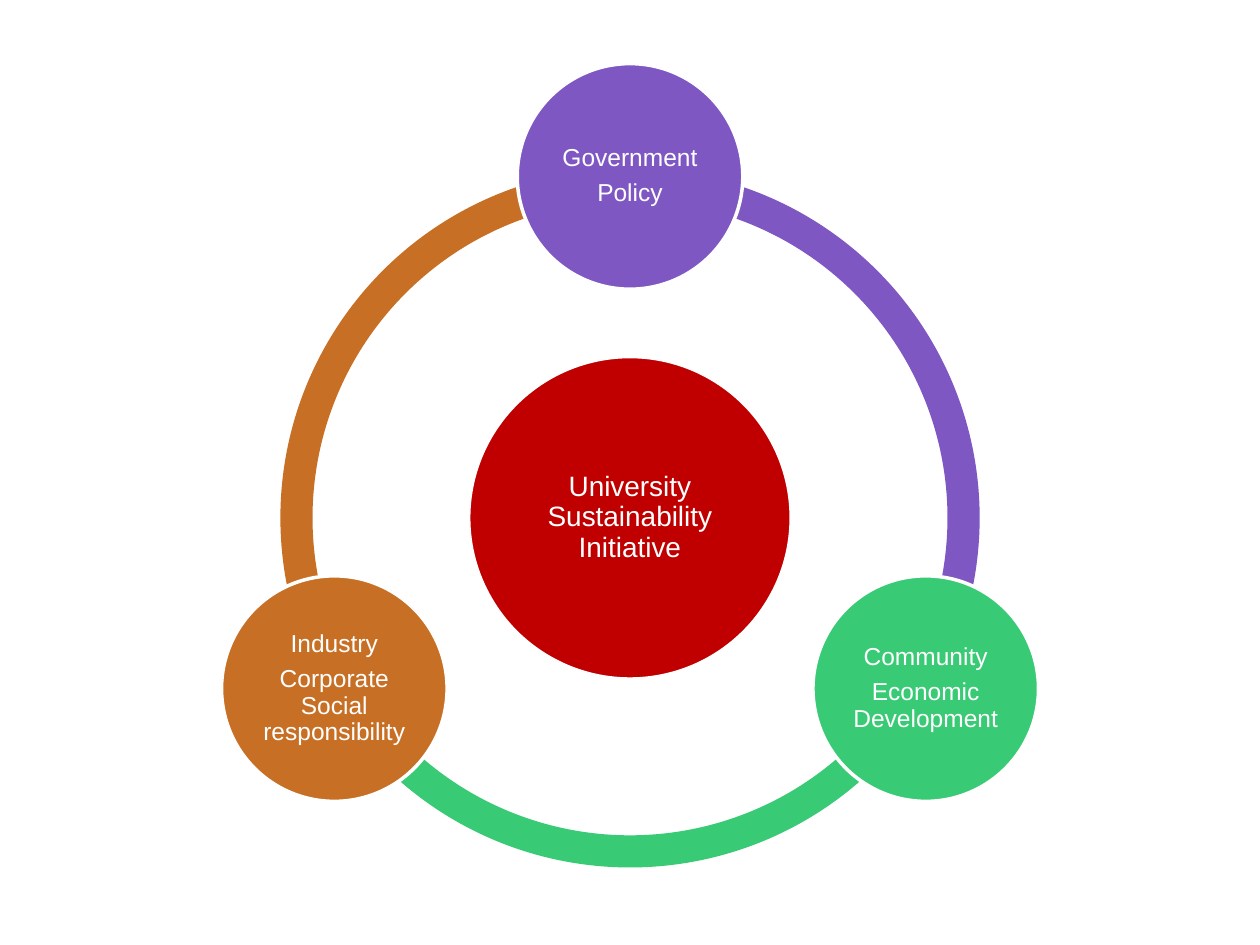
import math
from dataclasses import dataclass

import pptx
import pptx.dml.color
import pptx.enum.shapes
import pptx.enum.text
import pptx.util

Inches = pptx.util.Inches
Pt = pptx.util.Pt
RGBColor = pptx.dml.color.RGBColor
SHAPE = pptx.enum.shapes.MSO_SHAPE


@dataclass(frozen=True)
class Theme:
    white: str = "FFFFFF"
    hub: str = "C00000"
    government: str = "7E57C2"
    community: str = "39CA75"
    industry: str = "C77025"
    font: str = "Arial"
    hub_size: int = 16
    partner_size: int = 14
    outline: int = 2


THEME = Theme()
CENTER_X, CENTER_Y = 5, 4.11
RING_DIAMETER, RING_THICKNESS = 5.55, 0.046
HUB_DIAMETER, PARTNER_DIAMETER = 2.56, 1.79
ORBIT_RADIUS = 2.71
ANGLE_UNIT = 0.6  # adjustment value per degree

# Clockwise from the top: colour and paragraphs
PARTNERS = [
    (THEME.government, ["Government", "Policy"]),
    (THEME.community, ["Community", "Economic Development"]),
    (THEME.industry, ["Industry", "Corporate Social responsibility"]),
]
FRAME_FORMAT = {
    "word_wrap": True,
    "vertical_anchor": pptx.enum.text.MSO_ANCHOR.MIDDLE,
    **{f"margin_{side}": Inches(0.02) for side in ("left", "top", "right", "bottom")},
}


def apply_format(target, values):
    for name, value in values.items():
        setattr(target, name, value)


def add_centered(slide, preset, x, y, diameter, color):
    shape = slide.shapes.add_shape(
        preset, Inches(x - diameter / 2), Inches(y - diameter / 2),
        Inches(diameter), Inches(diameter))
    shape.shadow.inherit = False
    shape.fill.solid()
    shape.fill.fore_color.rgb = RGBColor.from_string(color)
    return shape


def add_ring_arc(slide, start, end, color):
    """Draw a ring segment clockwise between two angles in degrees."""
    arc = add_centered(slide, SHAPE.BLOCK_ARC, CENTER_X, CENTER_Y, RING_DIAMETER, color)
    arc.line.fill.background()
    for index, value in enumerate((start * ANGLE_UNIT, end * ANGLE_UNIT, RING_THICKNESS)):
        arc.adjustments[index] = value


def add_circle(slide, x, y, diameter, color, lines, size):
    circle = add_centered(slide, SHAPE.OVAL, x, y, diameter, color)
    circle.line.color.rgb = RGBColor.from_string(THEME.white)
    circle.line.width = Pt(THEME.outline)
    frame = circle.text_frame
    apply_format(frame, FRAME_FORMAT)
    frame.text = "\n".join(lines)
    for paragraph in frame.paragraphs:
        apply_format(paragraph, {
            "alignment": pptx.enum.text.PP_ALIGN.CENTER,
            "line_spacing": 0.9,
            "space_after": Pt(0.35 * size),
        })
        font = paragraph.runs[0].font
        apply_format(font, {"name": THEME.font, "size": Pt(size)})
        font.color.rgb = RGBColor.from_string(THEME.white)


def main():
    presentation = pptx.Presentation()
    apply_format(presentation, {"slide_width": Inches(10), "slide_height": Inches(7.5)})
    slide = presentation.slides.add_slide(presentation.slide_layouts[6])

    step = 360 // len(PARTNERS)
    angles = [(270 + step * index) % 360 for index in range(len(PARTNERS))]
    for angle, (color, _) in reversed(list(zip(angles, PARTNERS))):
        add_ring_arc(slide, angle, (angle + step) % 360, color)

    add_circle(slide, CENTER_X, CENTER_Y, HUB_DIAMETER, THEME.hub,
               ["University Sustainability Initiative"], THEME.hub_size)
    for angle, (color, lines) in zip(angles, PARTNERS):
        x = CENTER_X + ORBIT_RADIUS * math.cos(math.radians(angle))
        y = CENTER_Y + ORBIT_RADIUS * math.sin(math.radians(angle))
        add_circle(slide, x, y, PARTNER_DIAMETER, color, lines, THEME.partner_size)

    presentation.save("out.pptx")


if __name__ == "__main__":
    main()
